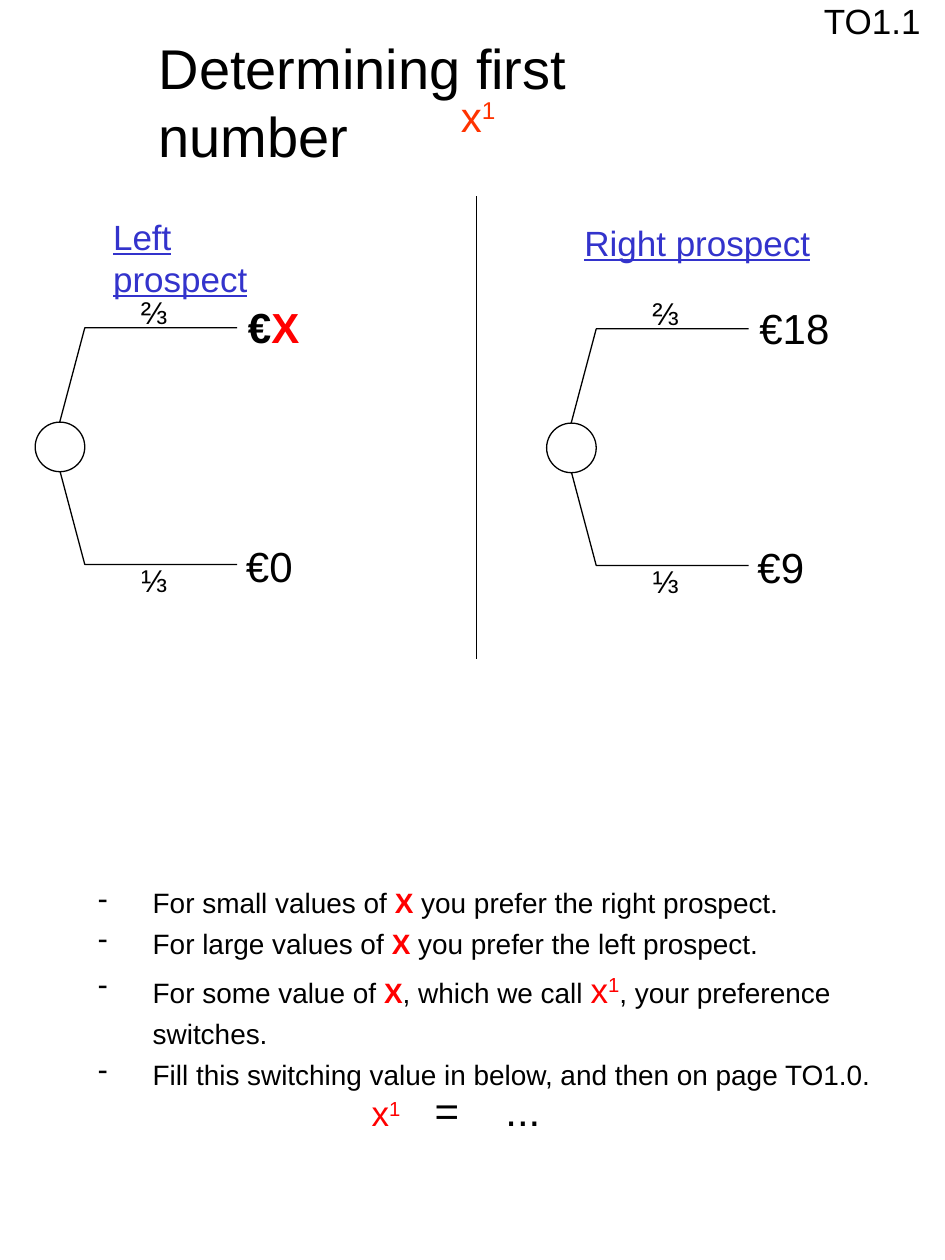
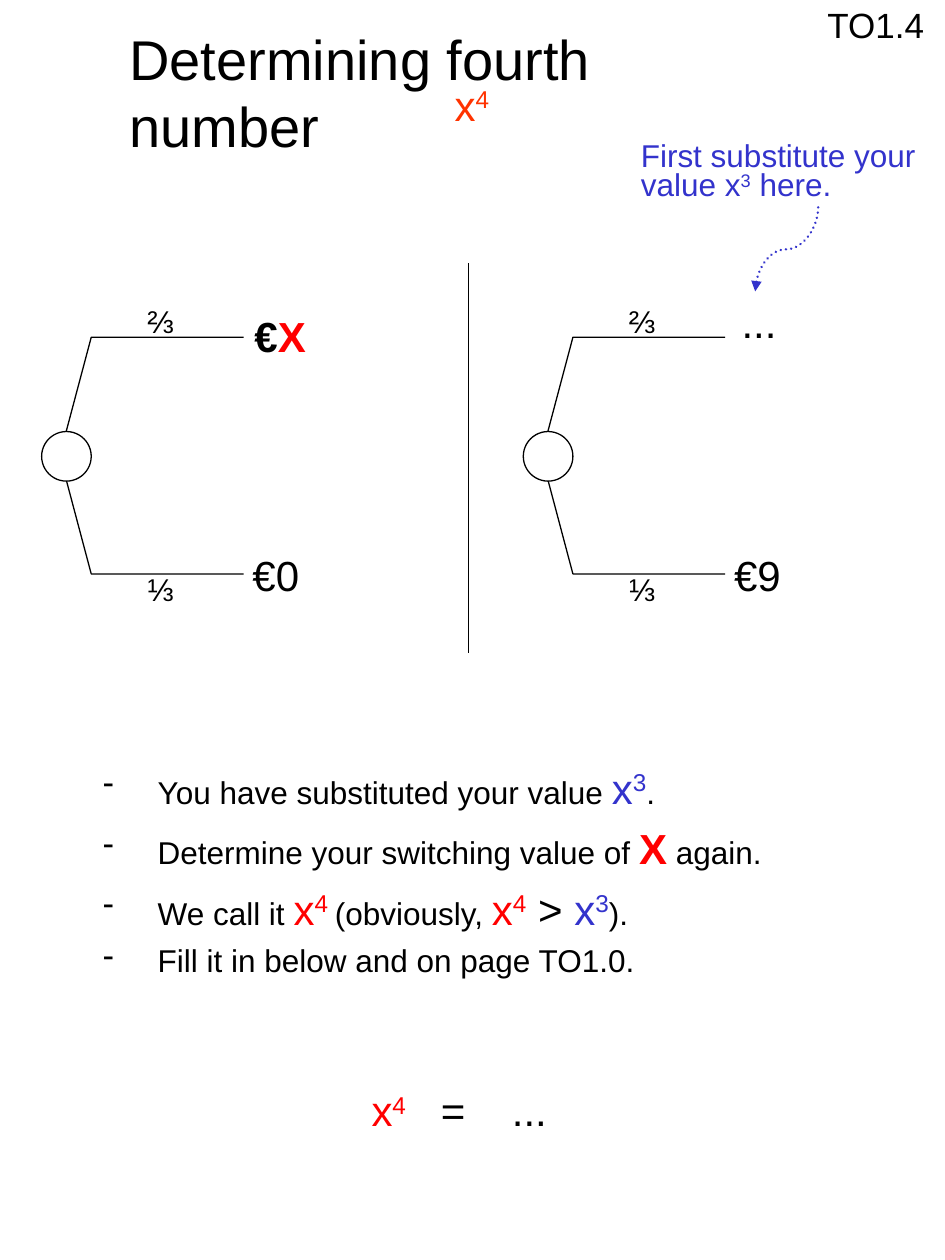
from dataclasses import dataclass
from typing import Optional

from lxml import etree
from pptx import Presentation
from pptx import util as u
from pptx.dml.color import RGBColor
from pptx.enum import dml, shapes, text
from pptx.oxml import ns

BLACK = RGBColor(0x00, 0x00, 0x00)
WHITE = RGBColor(0xFF, 0xFF, 0xFF)
RED = RGBColor(0xFF, 0x00, 0x00)
ORANGE = RGBColor(0xFF, 0x33, 0x00)
BLUE = RGBColor(0x33, 0x33, 0xCC)
FONT = "Arial"
BODY_INDENT = u.Cm(1.1)


@dataclass
class Piece:
    """A stretch of text; the size falls back to that of its text box."""
    words: str
    color: RGBColor = BLACK
    size: Optional[float] = None
    bold: bool = False
    raised: bool = False
    underline: bool = False


def variable(number, color, size=None):
    return [Piece("x", color, size), Piece(number, color, size, raised=True)]


# Basic parts; every box is (left, top, width, height) in centimetres

def add_child(parent, tag, **attributes):
    return etree.SubElement(parent, ns.qn(tag), attributes)


def add_text(slide, box, paragraphs, size, wrap=False, spacings=None):
    shape = slide.shapes.add_textbox(*map(u.Cm, box))
    frame = shape.text_frame
    frame.word_wrap = wrap
    for index, pieces in enumerate(paragraphs):
        paragraph = frame.add_paragraph() if index else frame.paragraphs[0]
        if spacings:
            paragraph.line_spacing = spacings[index]
        for piece in pieces:
            run = paragraph.add_run()
            run.text = piece.words
            font = run.font
            font.name = FONT
            font.size = u.Pt(piece.size or size)
            font.bold = piece.bold
            font.underline = piece.underline
            font.color.rgb = piece.color
            if piece.raised:
                font._element.set("baseline", "30000")
    return frame


def style_line(shape, color=BLACK, width=0.75):
    shape.line.color.rgb = color
    shape.line.width = u.Pt(width)


def add_line(slide, kind, start, end, color=BLACK, width=0.75):
    connector = slide.shapes.add_connector(kind, *map(u.Cm, start + end))
    style_line(connector, color, width)
    add_child(connector._element.spPr, "a:effectLst")
    return connector


# Regions

def add_heading(slide, box, title, number, variable_box, page, page_box):
    add_text(slide, box, [[Piece(title)]], 32, wrap=True)
    frame = add_text(slide, variable_box, [variable(number, ORANGE)], 24)
    frame.paragraphs[0].alignment = text.PP_ALIGN.RIGHT
    add_text(slide, page_box, [[Piece(page)]], 20)


def add_branch(slide, points):
    start, *others = [(u.Cm(x), u.Cm(y)) for x, y in points]
    builder = slide.shapes.build_freeform(*start)
    builder.add_line_segments(others, close=False)
    branch = builder.convert_to_shape()
    branch.fill.background()
    branch.shadow.inherit = False
    style_line(branch)


def add_prospect(slide, left, top, upper, lower, upper_offset=(4.04, -0.66)):
    """Chance node with two branches; top is the height of the upper branch."""
    height = 4.77
    for start, end in ((2.37, 0), (2.4, height)):
        add_branch(slide, [(left + 0.37, top + start),
                           (left + 1, top + end),
                           (left + 4.07, top + end)])
    node = slide.shapes.add_shape(
        shapes.MSO_SHAPE.OVAL,
        *map(u.Cm, (left, top + 1.9, 1, 1)))
    node.fill.solid()
    node.fill.fore_color.rgb = WHITE
    node.shadow.inherit = False
    style_line(node)
    # Probabilities and payoffs
    for chance, offset in (("⅔", -0.83), ("⅓", 4.57)):
        add_text(slide, (left + 1.88, top + offset, 1.22, 1.02), [[Piece(chance)]], 18)
    for payoff, (across, down) in ((upper, upper_offset), (lower, (4, 4.16))):
        add_text(slide, (left + across, top + down, 2.1, 1.27), [payoff], 24)


def add_instructions(slide, box, paragraphs, size):
    frame = add_text(slide, box, paragraphs, size, wrap=True,
                     spacings=[1.2] * len(paragraphs))
    for paragraph in frame.paragraphs:
        properties = paragraph._p.get_or_add_pPr()
        properties.set("marL", str(BODY_INDENT))
        properties.set("indent", str(-BODY_INDENT))
        add_child(properties, "a:buChar", char="-")


def add_answer(slide, number, size, tab_positions):
    frame = add_text(slide, (7.24, 21.74, 4.1, 1.27),
                     [variable(number, RED, size) + [Piece("\t=\t...")]], 24)
    tabs = add_child(frame.paragraphs[0]._p.get_or_add_pPr(), "a:tabLst")
    for position in tab_positions:
        add_child(tabs, "a:tab", pos=str(u.Cm(position)), algn="l")


def add_substitution_hint(slide, left, top):
    add_text(slide, (left, top, 6.05, 1.4),
             [[Piece("First substitute your", BLUE)],
              [Piece("value x", BLUE), Piece("3", BLUE, raised=True), Piece(" here.", BLUE)]],
             18, spacings=(0.7, 0.8))
    # Dotted arrow, turned to leave the hint downwards
    arrow = add_line(slide, shapes.MSO_CONNECTOR.CURVE,
                     (left + 2.34, top + 1.57), (left + 4.04, top + 2.84), BLUE, 1.5)
    arrow._element.spPr.xfrm.set("rot", str(270 * 60000))
    arrow.line.dash_style = dml.MSO_LINE.ROUND_DOT
    outline = arrow.line._get_or_add_ln()
    outline.set("cap", "rnd")
    add_child(outline, "a:headEnd", type="triangle")


# Slides

EURO_X = [Piece("€", bold=True), Piece("X", RED, bold=True)]
RED_X = Piece("X", RED, bold=True)


def add_first_number(slide):
    add_heading(slide, (2.95, 0.56, 12.45, 1.6), "Determining first number",
                "1", (7.6, 1.7, 2.64, 1.27), "TO1.1", (16.36, -0.13, 2.46, 1.09))
    add_line(slide, shapes.MSO_CONNECTOR.STRAIGHT, (9.6, 3.96), (9.6, 13.28))
    for name, box in (("Left prospect", (2.03, 4.22, 4.3, 1.09)),
                      ("Right prospect", (11.53, 4.34, 5.3, 1.09))):
        add_text(slide, box, [[Piece(name, BLUE, underline=True)]], 20, wrap=True)
    add_prospect(slide, 0.71, 6.61, EURO_X, [Piece("€0")])
    add_prospect(slide, 11.02, 6.63, [Piece("€18")], [Piece("€9")])
    add_instructions(slide, (1.73, 17.6, 16.38, 4.52), [
        [Piece("For small values of "), RED_X, Piece(" you prefer the right prospect.")],
        [Piece("For large values of "), RED_X, Piece(" you prefer the left prospect.")],
        [Piece("For some value of "), RED_X, Piece(", which we call "),
         *variable("1", RED, 20), Piece(", your preference switches.")],
        [Piece("Fill this switching value in below, and then on page TO1.0.")],
    ], 16)
    add_answer(slide, "1", 20, (1.27, 2.7))


def add_fourth_number(slide):
    add_heading(slide, (2.36, 0.36, 13.46, 1.6), "Determining fourth number",
                "4", (6.99, 1.47, 3.12, 1.27), "TO1.4", (16.43, -0.05, 2.46, 1.09))
    add_line(slide, shapes.MSO_CONNECTOR.STRAIGHT, (9.44, 5.31), (9.44, 13.16))
    add_prospect(slide, 0.84, 6.8, EURO_X, [Piece("€0")])
    add_prospect(slide, 10.55, 6.8, [Piece("...")], [Piece("€9")],
                 upper_offset=(4.15, -0.95))
    add_substitution_hint(slide, 12.67, 2.82)
    large_x = Piece("X", RED, 24, bold=True)
    add_instructions(slide, (1.83, 15.04, 14.94, 4.83), [
        [Piece("You have substituted your value "), *variable("3", BLUE, 24), Piece(".")],
        [Piece("Determine your switching value of "), large_x, Piece(" again.")],
        [Piece("We call it "), *variable("4 ", RED, 24), Piece("(obviously, "),
         *variable("4", RED, 24), Piece(" > ", size=24),
         *variable("3", BLUE, 24), Piece(").")],
        [Piece("Fill it in below and on page TO1.0.")],
    ], 18)
    add_answer(slide, "4", 24, (1.4, 2.83))


def main():
    presentation = Presentation()
    presentation.slide_width = u.Cm(19.05)
    presentation.slide_height = u.Cm(25.4)
    for fill_slide in (add_first_number, add_fourth_number):
        fill_slide(presentation.slides.add_slide(presentation.slide_layouts[6]))
    presentation.save("out.pptx")


if __name__ == "__main__":
    main()
